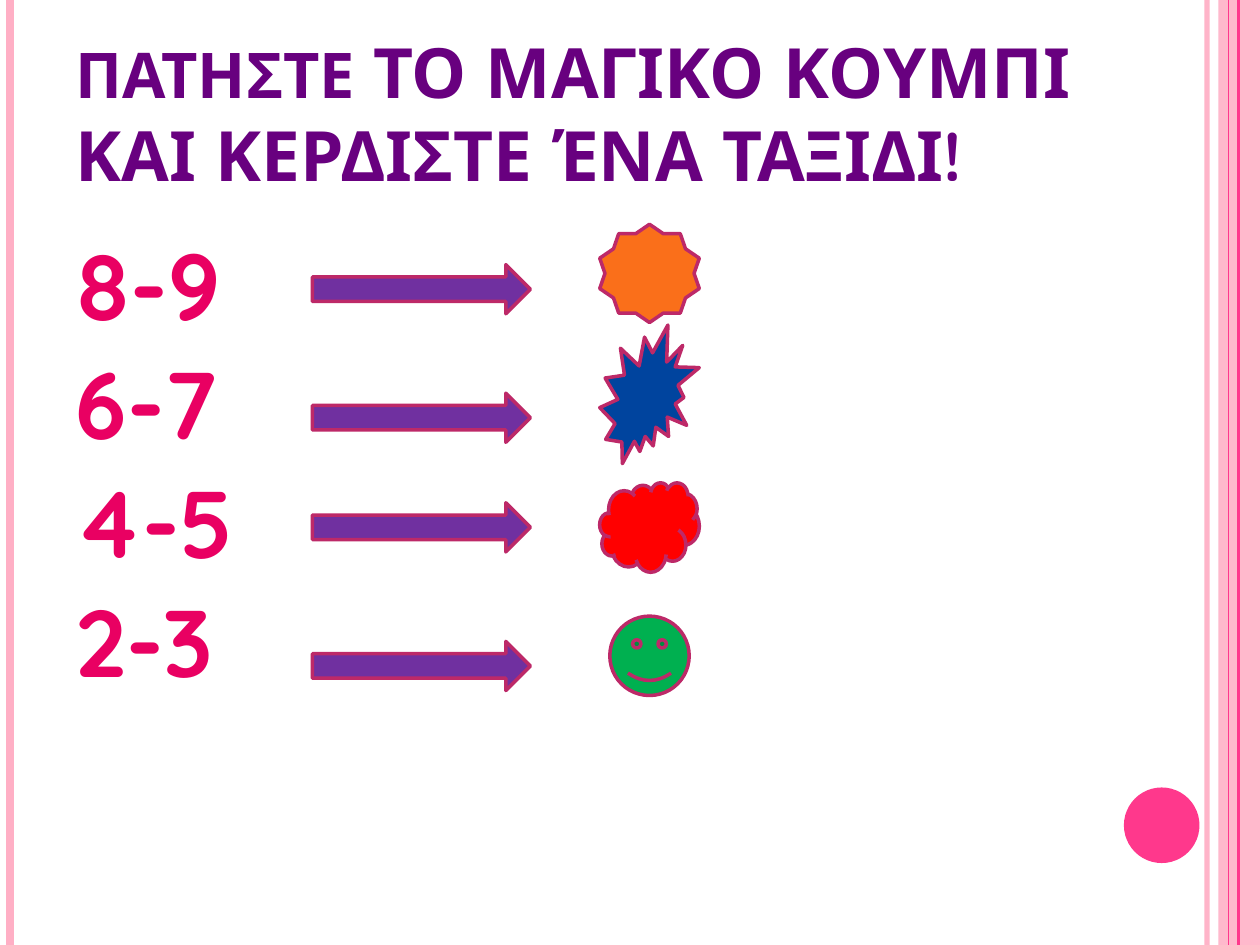
from typing import NamedTuple

from lxml.etree import SubElement
from pptx import Presentation
from pptx.dml.color import RGBColor
from pptx.enum.shapes import MSO_CONNECTOR, MSO_SHAPE
from pptx.enum.text import MSO_ANCHOR
from pptx.oxml.ns import qn
from pptx.util import Inches, Pt

PALE_PINK = RGBColor(0xFF, 0xAF, 0xC5)
HOT_PINK = RGBColor(0xFF, 0x38, 0x8C)
TITLE_PURPLE = RGBColor(0x68, 0x00, 0x7F)
NUMBER_PINK = RGBColor(0xE9, 0x00, 0x62)
ARROW_PURPLE = RGBColor(0x70, 0x30, 0xA0)
OUTLINE = RGBColor(0xBD, 0x29, 0x68)
ORANGE = RGBColor(0xFA, 0x6F, 0x1A)
BLUE = RGBColor(0x00, 0x44, 0x9E)
RED = RGBColor(0xFF, 0x00, 0x00)
GREEN = RGBColor(0x00, 0xB0, 0x50)
FONT = "Quicksand"


class Stripe(NamedTuple):
    x: float
    color: RGBColor
    width: float
    opacity: int = 100


class Button(NamedTuple):
    ages: str
    arrow_top: float
    kind: MSO_SHAPE
    box: tuple[float, float, float, float]
    color: RGBColor


LEFT_STRIPES = [Stripe(9.58, PALE_PINK, 3, 93), Stripe(0.08, PALE_PINK, 4.5)]
BAND_STRIPES = [Stripe(9.83, HOT_PINK, 1.5), Stripe(9.75, HOT_PINK, 0.75)]
BUTTONS = [
    Button("8-9", 2.1, MSO_SHAPE.STAR_10_POINT, (4.76, 1.78, 0.79, 0.78), ORANGE),
    Button("6-7", 3.12, MSO_SHAPE.EXPLOSION2, (4.76, 2.58, 0.79, 1.1), BLUE),
    Button("4-5", 3.99, MSO_SHAPE.CLOUD, (4.76, 3.83, 0.79, 0.71), RED),
    Button("2-3", 5.09, MSO_SHAPE.SMILEY_FACE, (4.84, 4.89, 0.63, 0.63), GREEN),
]


def set_opacity(sp, percent: int) -> None:
    color = next(sp._element.spPr.iter(qn("a:srgbClr")))
    SubElement(color, qn("a:alpha"), val=str(percent * 1000))


def add_stripe(s, stripe: Stripe) -> None:
    x = Inches(stripe.x)
    line = s.shapes.add_connector(MSO_CONNECTOR.STRAIGHT, x, 0, x, Inches(7.5))
    line.line.color.rgb = stripe.color
    line.line.width = Pt(stripe.width)
    if stripe.opacity < 100:
        set_opacity(line, stripe.opacity)
    SubElement(line._element.spPr, qn("a:effectLst"))


def add_figure(s, kind: MSO_SHAPE, box: tuple[float, float, float, float],
               fill: RGBColor, outlined: bool = True):
    sp = s.shapes.add_shape(kind, *map(Inches, box))
    sp.shadow.inherit = False
    sp.fill.solid()
    sp.fill.fore_color.rgb = fill
    if outlined:
        sp.line.color.rgb = OUTLINE
        sp.line.width = Pt(2)
    else:
        sp.line.fill.background()
    return sp


def add_text_frame(s, top: float, height: float):
    sp = s.shapes.add_textbox(Inches(0.5), Inches(top), Inches(8.17), Inches(height))
    tf = sp.text_frame
    tf.word_wrap = True
    return tf


def style_paragraph(p, color: RGBColor) -> None:
    p.font.name = FONT
    p.font.bold = True
    p.font.color.rgb = color


def add_title(s) -> None:
    tf = add_text_frame(s, 0.3, 1.25)
    tf.vertical_anchor = MSO_ANCHOR.BOTTOM
    tf.margin_bottom = 0
    p = tf.paragraphs[0]
    p.line_spacing = Pt(47.4)
    style_paragraph(p, TITLE_PURPLE)
    for text, size in [("ΠΑΤΗΣΤΕ ", 36),
                       ("ΤΟ ΜΑΓΙΚΟ ΚΟΥΜΠΙ ΚΑΙ ΚΕΡΔΙΣΤΕ ΈΝΑ ΤΑΞΙΔΙ!", 39.6)]:
        r = p.add_run()
        r.text = text
        r.font.size = Pt(size)


def add_ages(s) -> None:
    tf = add_text_frame(s, 1.75, 5.33)
    tf.text = "\n".join(button.ages for button in BUTTONS)
    for i, p in enumerate(tf.paragraphs):
        style_paragraph(p, NUMBER_PINK)
        p.font.size = Pt(54)
        p.space_before = Pt(3 if i else 0)


def main() -> None:
    prs = Presentation()
    prs.slide_width, prs.slide_height = Inches(10), Inches(7.5)
    s = prs.slides.add_slide(prs.slide_layouts[6])

    for stripe in LEFT_STRIPES:
        add_stripe(s, stripe)
    band = add_figure(s, MSO_SHAPE.RECTANGLE, (9.67, 0, 0.33, 7.5), PALE_PINK, False)
    set_opacity(band, 87)
    for stripe in BAND_STRIPES:
        add_stripe(s, stripe)
    add_figure(s, MSO_SHAPE.OVAL, (8.92, 6.25, 0.6, 0.6), HOT_PINK, False)

    add_title(s)
    add_ages(s)
    for button in BUTTONS:
        add_figure(s, MSO_SHAPE.RIGHT_ARROW, (2.48, button.arrow_top, 1.73, 0.39),
                   ARROW_PURPLE)
        add_figure(s, button.kind, button.box, button.color)
    prs.save("out.pptx")


if __name__ == "__main__":
    main()
